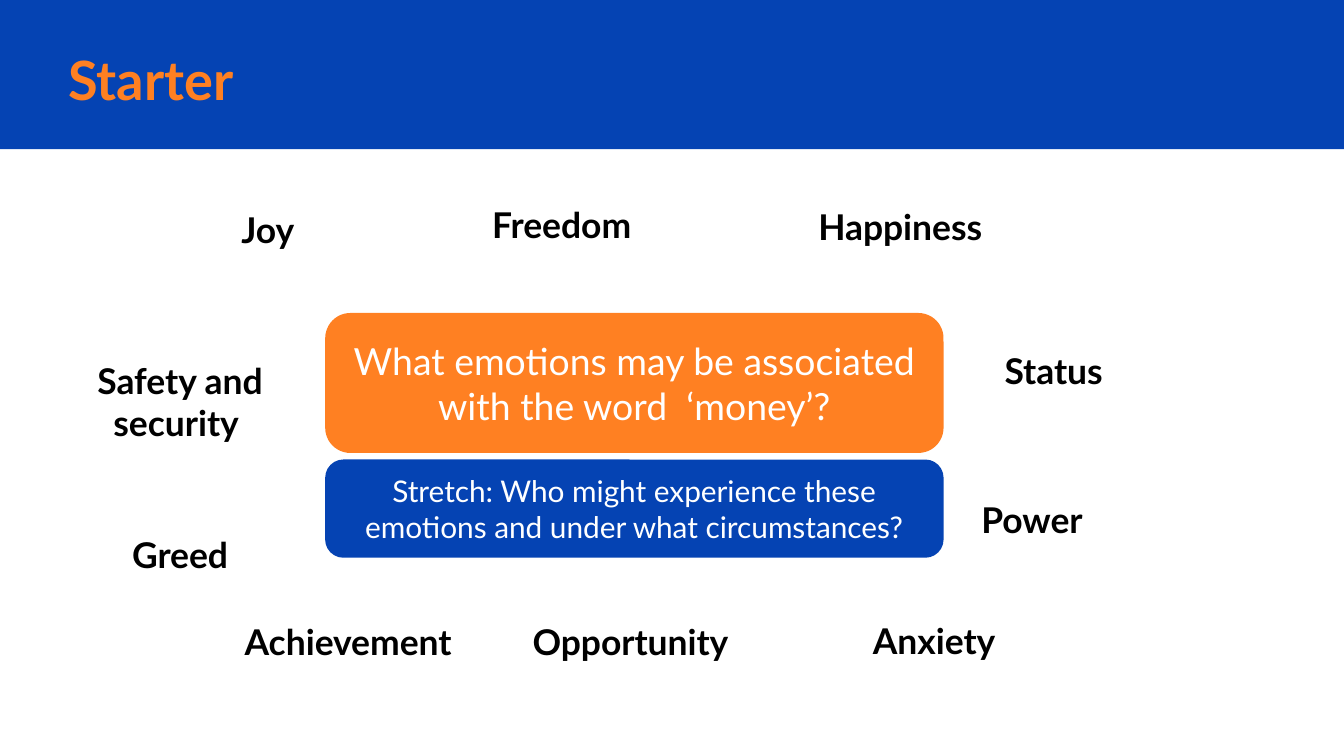
from pptx import Presentation
from pptx.dml.color import RGBColor
from pptx.enum.shapes import MSO_SHAPE
from pptx.enum.text import MSO_ANCHOR, MSO_AUTO_SIZE, PP_ALIGN
from pptx.util import Cm, Pt

RECTANGLE = MSO_SHAPE.RECTANGLE
ROUNDED_RECTANGLE = MSO_SHAPE.ROUNDED_RECTANGLE
TOP, MIDDLE = MSO_ANCHOR.TOP, MSO_ANCHOR.MIDDLE
LEFT, CENTER = PP_ALIGN.LEFT, PP_ALIGN.CENTER
NO_AUTOFIT, GROW = MSO_AUTO_SIZE.NONE, MSO_AUTO_SIZE.SHAPE_TO_FIT_TEXT

BLUE = RGBColor(0x05, 0x43, 0xB3)
ORANGE = RGBColor(0xFF, 0x80, 0x22)
WHITE = RGBColor(0xFF, 0xFF, 0xFF)
BLACK = RGBColor(0x00, 0x00, 0x00)

FONT = "Lato"
SLIDE_WIDTH, SLIDE_HEIGHT = 25.4, 14.29
INSET = 0.25
WORD_WIDTH, WORD_HEIGHT = 3.91, 1.32
CARD_LEFT, CARD_WIDTH = 6.2, 11.58

# Word, left, top, then width and height where they differ from the usual
EMOTIONS = [
    ("Joy ", 3.18, 3.68),
    ("Freedom", 8.66, 3.58),
    ("Happiness", 15.06, 3.63),
    ("Safety and security ", 1.45, 6.53, WORD_WIDTH, 2.13),
    ("Status", 17.96, 6.35),
    ("Greed", 1.45, 9.83),
    ("Power", 17.55, 9.17),
    ("Achievement ", 4.32, 11.48, 4.52),
    ("Opportunity ", 9.55, 11.48, 4.88),
    ("Anxiety", 15.7, 11.46),
]


def write_text(shape, text, size, color, bold=False, align=CENTER,
               anchor=MIDDLE, auto_size=NO_AUTOFIT):
    frame = shape.text_frame
    frame.word_wrap = True
    frame.auto_size = auto_size
    frame.vertical_anchor = anchor
    frame.margin_left = frame.margin_right = Cm(INSET)
    frame.margin_top = frame.margin_bottom = Cm(INSET)
    paragraph = frame.paragraphs[0]
    paragraph.alignment = align
    run = paragraph.add_run()
    run.text = text
    run.font.name = FONT
    run.font.size = Pt(size)
    run.font.bold = bold
    run.font.color.rgb = color


def add_block(slide, kind, left, top, width, height, color):
    shape = slide.shapes.add_shape(kind, Cm(left), Cm(top), Cm(width), Cm(height))
    shape.shadow.inherit = False
    shape.fill.solid()
    shape.fill.fore_color.rgb = color
    shape.line.fill.background()
    return shape


def add_header(slide, text):
    """Put the title on a banner that lies behind it."""
    title = slide.shapes.title
    title.left, title.top = Cm(1.04), Cm(0.78)
    title.width, title.height = Cm(15.85), Cm(1.42)
    write_text(title, text, size=29, color=ORANGE, bold=True, align=LEFT)
    banner = add_block(slide, RECTANGLE, 0, 0, SLIDE_WIDTH, 2.82, BLUE)
    title.element.addprevious(banner.element)


def add_card(slide, text, top, height, color, size):
    card = add_block(slide, ROUNDED_RECTANGLE, CARD_LEFT, top, CARD_WIDTH, height, color)
    card.line.color.rgb = color
    card.line.width = Pt(3)
    write_text(card, text, size=size, color=WHITE)


def add_emotion(slide, text, left, top, width=WORD_WIDTH, height=WORD_HEIGHT):
    box = slide.shapes.add_textbox(Cm(left), Cm(top), Cm(width), Cm(height))
    write_text(box, text, size=19, color=BLACK, bold=True, anchor=TOP, auto_size=GROW)


def main():
    presentation = Presentation()
    presentation.slide_width = Cm(SLIDE_WIDTH)
    presentation.slide_height = Cm(SLIDE_HEIGHT)
    title_only = presentation.slide_layouts[5]
    slide = presentation.slides.add_slide(title_only)

    add_header(slide, "Starter")
    add_card(slide, "What emotions may be associated with the word  ‘money’?",
             top=5.97, height=2.54, color=ORANGE, size=20)
    for emotion in EMOTIONS:
        add_emotion(slide, *emotion)
    add_card(slide, "Stretch: Who might experience these emotions and under what circumstances?",
             top=8.74, height=1.75, color=BLUE, size=16)

    presentation.save("out.pptx")


if __name__ == "__main__":
    main()
